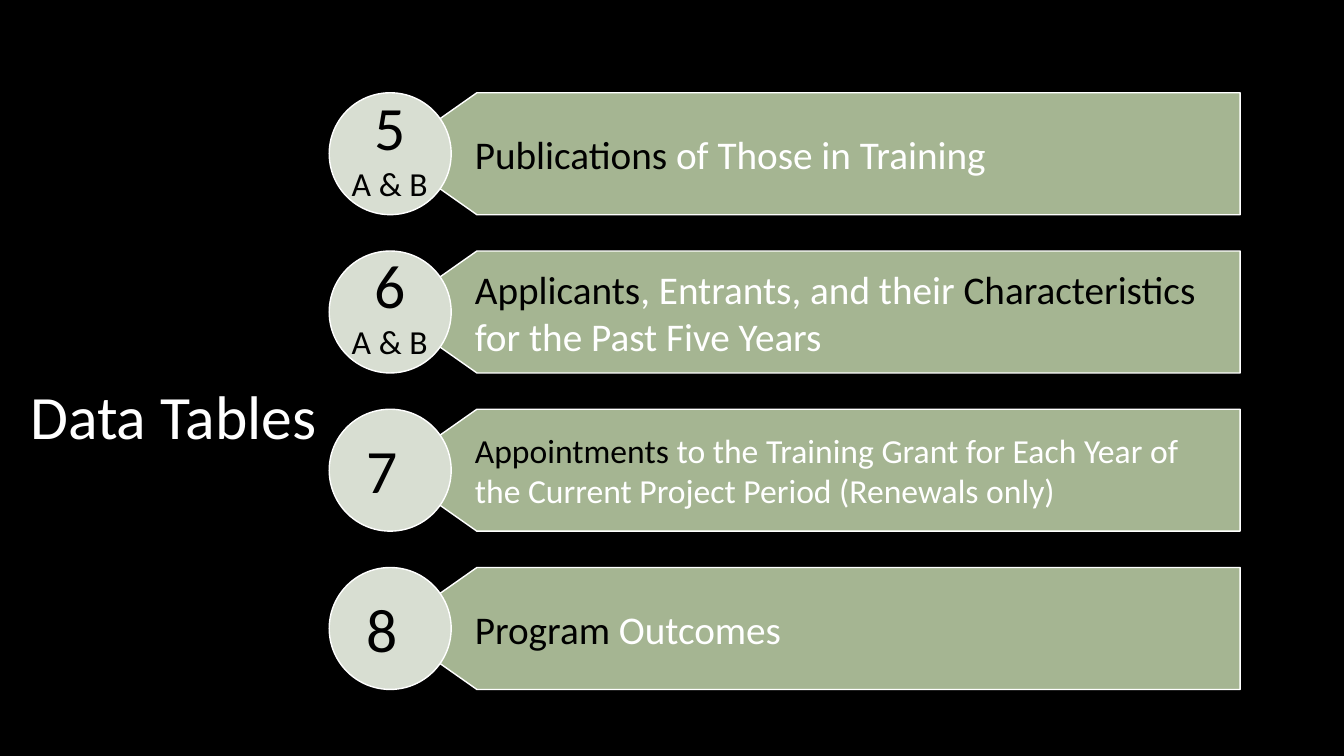
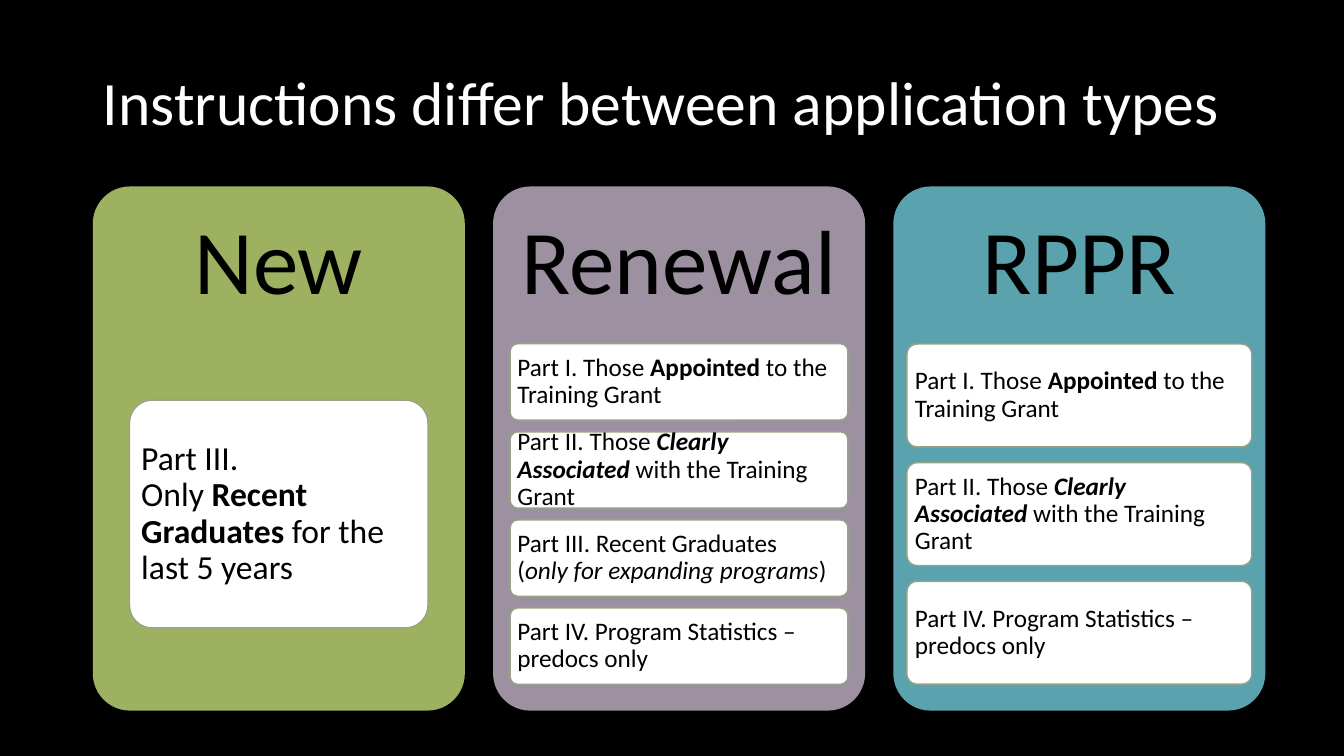
import dataclasses
import typing

import pptx
import pptx.dml.color
import pptx.enum.shapes
import pptx.enum.text
import pptx.util

Inches = pptx.util.Inches
Pt = pptx.util.Pt
Kind = pptx.enum.shapes.MSO_SHAPE
Align = pptx.enum.text.PP_ALIGN
Anchor = pptx.enum.text.MSO_ANCHOR


# Theme: colours, font and type sizes
@dataclasses.dataclass(frozen=True)
class Theme:
    font: str = "Calibri"
    black: str = "000000"
    white: str = "FFFFFF"
    sage: str = "A5B592"
    pale: str = "D8DED2"
    edge: str = "96A485"
    green: str = "9EB160"
    mauve: str = "9D90A0"
    teal: str = "5AA2AE"
    head: int = 65
    title: int = 44
    label: int = 28
    note: int = 24
    small: int = 18


THEME = Theme()


class Box(typing.NamedTuple):
    left: float
    top: float
    width: float
    height: float


class Bit(typing.NamedTuple):
    text: str
    bold: bool = False
    slant: bool = False
    color: str = THEME.black
    size: int | None = None


class Row(typing.NamedTuple):
    mark: str
    bits: list[Bit]
    sub: str = ""
    size: int = THEME.label


class Panel(typing.NamedTuple):
    name: str
    fill: str
    width: float
    cards: list[list[Bit]]
    size: int = THEME.small
    limit: float = 1.02


# Shared drawing helpers
def rgb(code: str) -> pptx.dml.color.RGBColor:
    return pptx.dml.color.RGBColor.from_string(code)


def place(box: Box) -> list[int]:
    return [Inches(side) for side in box]


def paint(shape: typing.Any, fill: str, line: str | None = None) -> None:
    shape.shadow.inherit = False
    shape.fill.solid()
    shape.fill.fore_color.rgb = rgb(fill)
    if line is None:
        shape.line.fill.background()
    else:
        shape.line.color.rgb = rgb(line)
        shape.line.width = Pt(1)


def write(shape: typing.Any, bits: list[Bit], size: int, align: Align = Align.LEFT,
          space: float = 1.0, inset: tuple = (0.1, 0.05, 0.1, 0.05),
          anchor: Anchor = Anchor.MIDDLE) -> None:
    frame = shape.text_frame
    left, top, right, bottom = (Inches(side) for side in inset)
    form = {"word_wrap": True, "auto_size": pptx.enum.text.MSO_AUTO_SIZE.NONE,
            "vertical_anchor": anchor, "margin_left": left, "margin_top": top,
            "margin_right": right, "margin_bottom": bottom}
    for key, value in form.items():
        setattr(frame, key, value)
    para = frame.paragraphs[0]
    para.alignment = align
    para.line_spacing = space
    for bit in bits:
        for count, line in enumerate(bit.text.split("\n")):
            if count:
                para.add_line_break()
            if not line:
                continue
            run = para.add_run()
            run.text = line
            look = {"name": THEME.font, "size": Pt(bit.size or size),
                    "bold": bit.bold, "italic": bit.slant}
            for key, value in look.items():
                setattr(run.font, key, value)
            run.font.color.rgb = rgb(bit.color)


def start(deck: typing.Any, title: str, box: Box) -> typing.Any:
    slide = deck.slides.add_slide(deck.slide_layouts[5])
    head = slide.shapes.title
    head.left, head.top, head.width, head.height = place(box)
    write(head, [Bit(title, color=THEME.white)], THEME.title, space=0.9)
    return slide


# Slide 1: numbered tables
ROWS = [
    Row("5", [Bit("Publications"), Bit(" of Those in Training", color=THEME.white)], "A & B"),
    Row("6", [Bit("Applicants"), Bit(", Entrants, and their ", color=THEME.white),
              Bit("Characteristics"),
              Bit(" for the Past Five Years", color=THEME.white)], "A & B"),
    Row("7", [Bit("Appointments"),
              Bit(" to the Training Grant for Each Year of the Current Project Period "
                  "(Renewals only)", color=THEME.white)], size=THEME.note),
    Row("8", [Bit("Program"), Bit(" Outcomes", color=THEME.white)]),
]


def draw_row(slide: typing.Any, row: Row, top: float) -> None:
    tip, neck, right, high = 3.87, 4.73, 12.3, 1.21
    mid, base = top + high / 2, top + high
    shapes = slide.shapes
    pen = shapes.build_freeform(Inches(right), Inches(base))
    points = [(neck, base), (tip, mid), (neck, top), (right, top)]
    pen.add_line_segments([(Inches(x), Inches(y)) for x, y in points], close=True)
    arrow = pen.convert_to_shape()
    paint(arrow, THEME.sage, THEME.white)
    write(arrow, row.bits, row.size, inset=(0.84, 0.08, 0.16, 0.08))

    disc = shapes.add_shape(Kind.OVAL, *place(Box(tip - high / 2, top, high, high)))
    paint(disc, THEME.pale, THEME.white)
    if row.sub:
        box, align = Box(3.33, top - 0.09, 1.07, 1.25), Align.CENTER
        bits = [Bit(row.mark + "\n"), Bit(row.sub, size=THEME.note)]
    else:
        box, align = Box(3.54, top + 0.18, 0.66, 0.84), Align.LEFT
        bits = [Bit(row.mark)]
    mark = shapes.add_textbox(*place(box))
    write(mark, bits, THEME.title, align, anchor=Anchor.TOP)


def draw_tables(deck: typing.Any) -> None:
    slide = start(deck, "Data Tables", Box(0.2, 3.61, 3.48, 1.1))
    for index, row in enumerate(ROWS):
        draw_row(slide, row, 0.92 + index * 1.57)


# Slide 2: panels of cards
FIRST = [Bit("Part I. Those "), Bit("Appointed", bold=True), Bit(" to the Training Grant")]
SECOND = [Bit("Part II. Those "), Bit("Clearly Associated ", bold=True, slant=True),
          Bit("with the Training Grant")]
FOURTH = [Bit("Part IV. Program Statistics – predocs only")]

PANELS = [
    Panel("New", THEME.green, 2.96, [
        [Bit("Part III. \nOnly "), Bit("Recent Graduates ", bold=True),
         Bit("for the last 5 years")]], THEME.note, 2.26),
    Panel("Renewal", THEME.mauve, 3.35, [
        FIRST, SECOND,
        [Bit("Part III. Recent Graduates \n("),
         Bit("only for expanding programs", slant=True), Bit(")")], FOURTH]),
    Panel("RPPR", THEME.teal, 3.42, [FIRST, SECOND, FOURTH]),
]


def draw_round(slide: typing.Any, box: Box, fill: str, line: str | None = None) -> typing.Any:
    shape = slide.shapes.add_shape(Kind.ROUNDED_RECTANGLE, *place(box))
    shape.adjustments[0] = 0.1
    paint(shape, fill, line)
    return shape


def draw_panel(slide: typing.Any, panel: Panel, left: float, width: float) -> None:
    back = draw_round(slide, Box(left, 1.85, width, 5.2), panel.fill)
    write(back, [Bit(panel.name)], THEME.head, Align.CENTER, 0.9, (0.16, 0.16, 0.16, 3.8))

    # Cards share the zone; each gap is 2/13 of a card
    zone, middle, ratio = 3.38, 5.1, 2 / 13
    count = len(panel.cards)
    parts = count + (count - 1) * ratio
    high = min(zone / parts, panel.limit)
    top = middle - high * parts / 2
    for index, bits in enumerate(panel.cards):
        box = Box(left + (width - panel.width) / 2, top + index * high * (1 + ratio),
                  panel.width, high)
        card = draw_round(slide, box, THEME.white, THEME.edge)
        write(card, bits, panel.size, space=0.9, inset=(0.05, 0.04, 0.05, 0.04))


def draw_types(deck: typing.Any) -> None:
    slide = start(deck, "Instructions differ between application types",
                  Box(0.92, 0.4, 11.5, 1.29))
    for index, panel in enumerate(PANELS):
        draw_panel(slide, panel, 0.92 + index * 3.97, 3.69)


def main() -> None:
    deck = pptx.Presentation()
    deck.slide_width, deck.slide_height = Inches(13.33), Inches(7.5)
    fill = deck.slide_master.background.fill
    fill.solid()
    fill.fore_color.rgb = rgb(THEME.black)
    draw_tables(deck)
    draw_types(deck)
    deck.save("out.pptx")


if __name__ == "__main__":
    main()
